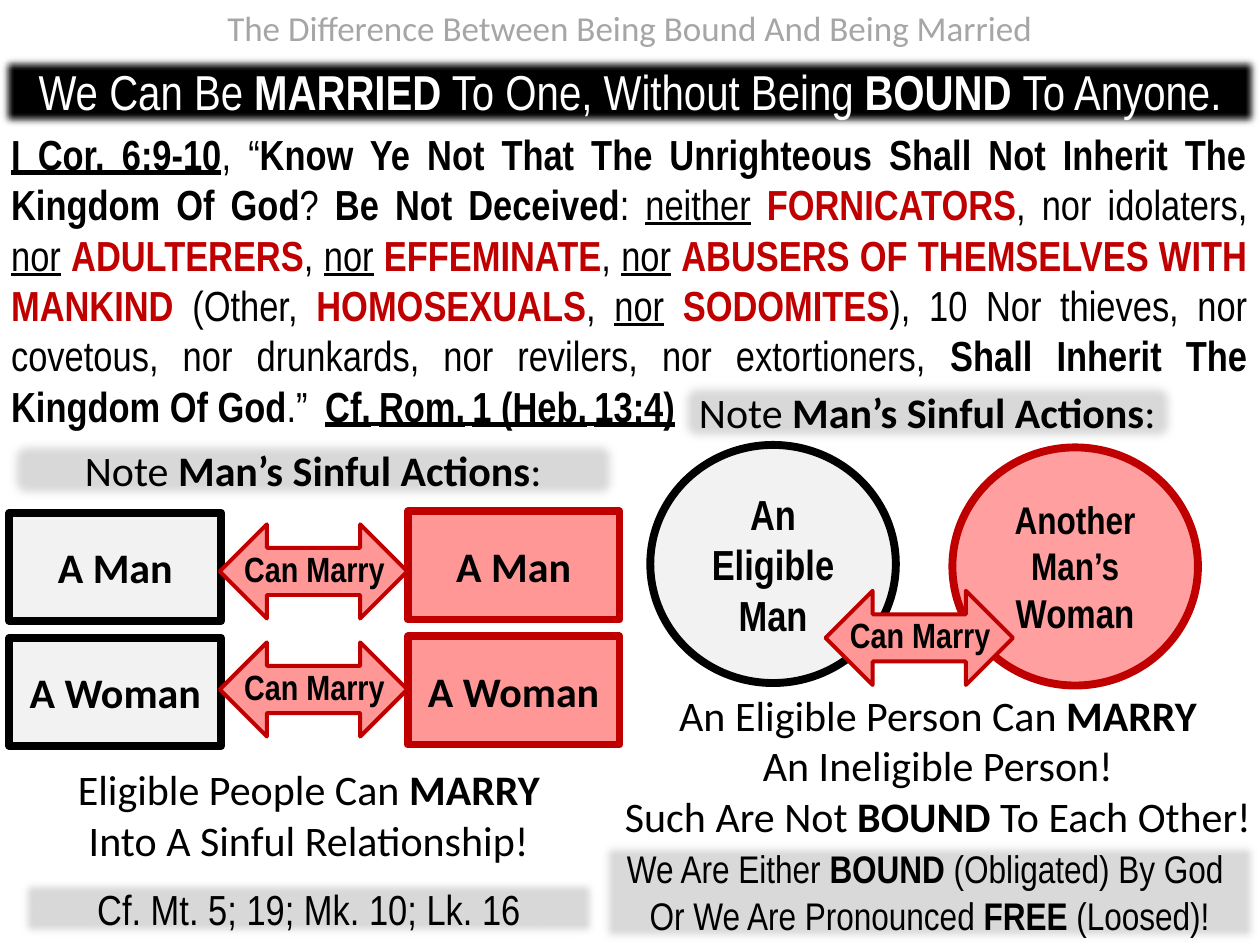
import pptx
import pptx.util
import pptx.dml.color
import pptx.enum.shapes
import pptx.enum.text
import pptx.oxml
import pptx.oxml.ns

Cm = pptx.util.Cm
Pt = pptx.util.Pt
SHAPE = pptx.enum.shapes.MSO_SHAPE
ANCHOR = pptx.enum.text.MSO_ANCHOR
ALIGN = pptx.enum.text.PP_ALIGN

COLOURS = {
    "black": "000000", "white": "FFFFFF", "heading": "A6A6A6",
    "bar": "D9D9D9", "eligible": "F2F2F2", "red": "C00000",
    "sinful": "FF9797", "sinful circle": "FF9F9F",
}
NARROW, SANS = "Arial Narrow", "Calibri"

# Each span is (text, style, size): b bold, u underlined, r red; size is optional.
NOTE = [("Note ", ""), ("Man’s Sinful Actions", "b"), (":", "")]
VERSE = [
    ("I Cor. 6:9-10", "bu"), (", “", ""),
    ("Know Ye Not That The Unrighteous Shall Not Inherit The Kingdom Of God", "b"),
    ("? ", ""), ("Be Not Deceived", "b"), (": ", ""), ("neither", "u"), (" ", ""),
    ("FORNICATORS", "br"), (", nor idolaters, ", ""), ("nor", "u"), (" ", ""),
    ("ADULTERERS", "br"), (", ", ""), ("nor", "u"), (" ", ""),
    ("EFFEMINATE", "br"), (", ", ""), ("nor", "u"), (" ", ""),
    ("ABUSERS OF THEMSELVES WITH MANKIND", "br"), (" (Other, ", ""),
    ("HOMOSEXUALS", "br"), (", ", ""), ("nor", "u"), (" ", ""), ("SODOMITES", "br"),
    ("), 10 Nor thieves, nor covetous, nor drunkards, nor revilers, nor extortioners, ", ""),
    ("Shall Inherit The Kingdom Of God", "b"), (".” ", ""), (" ", "", 20),
    ("Cf.", "bu"), (" ", "bu", 20), ("Rom.", "bu"), (" ", "bu", 18),
    ("1 (Heb.", "bu"), (" ", "bu", 18), ("13:4)", "bu"),
]


def rgb(name):
    return pptx.dml.color.RGBColor.from_string(COLOURS[name])


def write(box, spans, size, font, colour="black", anchor=ANCHOR.TOP, align=ALIGN.CENTER):
    """Fill the box with one paragraph; a newline in a span is a line break."""
    frame = box.text_frame
    frame.word_wrap = True
    frame.auto_size = pptx.enum.text.MSO_AUTO_SIZE.NONE
    frame.vertical_anchor = anchor
    para = frame.paragraphs[0]
    para.alignment = align
    para.space_before = Pt(0)
    for text, style, *own_size in spans:
        for number, line in enumerate(text.split("\n")):
            if number:
                para.add_line_break()
            if not line:
                continue
            span = para.add_run()
            span.text = line
            span.font.name = font
            span.font.size = Pt(own_size[0] if own_size else size)
            span.font.bold = "b" in style
            span.font.underline = "u" in style
            span.font.color.rgb = rgb("red" if "r" in style else colour)


def place(box, left, top, width, height):
    box.left, box.top, box.width, box.height = map(Cm, (left, top, width, height))


def add_shape(page, kind, area, fill=None, line=None, line_width=4.5):
    shape = page.shapes.add_shape(kind, *map(Cm, area))
    shape.shadow.inherit = False
    if fill:
        shape.fill.solid()
        shape.fill.fore_color.rgb = rgb(fill)
    else:
        shape.fill.background()
    if line:
        shape.line.color.rgb = rgb(line)
        shape.line.width = Pt(line_width)
    else:
        shape.line.fill.background()
    return shape


def add_soft_bar(page, kind, area, fill="bar"):
    bar = add_shape(page, kind, area, fill)
    effects = bar._element.spPr.find(pptx.oxml.ns.qn("a:effectLst"))
    effects.append(pptx.oxml.parse_xml(
        '<a:softEdge %s rad="63500"/>' % pptx.oxml.ns.nsdecls("a")))
    return bar


def add_note(page, area):
    write(add_soft_bar(page, SHAPE.ROUNDED_RECTANGLE, area), NOTE, 24, SANS,
          anchor=ANCHOR.MIDDLE)


def add_conclusion(page, area, spans):
    write(add_shape(page, SHAPE.ROUNDED_RECTANGLE, area), spans, 24, SANS,
          anchor=ANCHOR.MIDDLE)


def add_person(page, kind, area, fill, line, spans, size, font):
    write(add_shape(page, kind, area, fill, line), spans, size, font,
          anchor=ANCHOR.MIDDLE)


def add_marry_arrow(page, left, top):
    """Add an upright double arrow turned on its side, with its label."""
    arrow = add_shape(page, SHAPE.UP_DOWN_ARROW, (left, top, 1.9, 3.78),
                      "sinful", "red", 2.25)
    arrow.rotation = 90
    label = page.shapes.add_textbox(Cm(left - 1), Cm(top + 1.28), Cm(3.94), Cm(1.12))
    write(label, [("Can Marry", "b")], 20, NARROW)


def add_heading_and_verse(page):
    title, body = page.shapes.title, page.placeholders[1]
    place(title, 0, 0, 25.4, 1.12)
    write(title, [("The Difference Between Being Bound And Being Married", "")],
          20, SANS, "heading")
    place(body, -0.03, 2.46, 25.43, 6.4)
    write(body, VERSE, 24, NARROW, align=ALIGN.JUSTIFY)
    properties = body.text_frame.paragraphs[0]._p.get_or_add_pPr()
    properties.set("marL", "0")
    properties.set("indent", "0")
    properties.append(pptx.oxml.parse_xml("<a:buNone %s/>" % pptx.oxml.ns.nsdecls("a")))


def add_bars(page):
    claim = add_soft_bar(page, SHAPE.RECTANGLE, (0, 1.12, 25.4, 1.45), "black")
    write(claim, [("We Can Be ", ""), ("MARRIED", "b"), (" To One, Without Being", ""),
                  (" BOUND ", "b"), ("To Anyone.", "")], 28, NARROW, "white")
    status = add_soft_bar(page, SHAPE.RECTANGLE, (12.07, 16.92, 13.34, 2.13))
    write(status, [("We Are Either ", ""), ("BOUND", "b"),
                   (" (Obligated) By God \nOr We Are Pronounced ", ""),
                   ("FREE", "b"), (" (Loosed)!", "")], 22, NARROW)
    references = add_soft_bar(page, SHAPE.RECTANGLE, (0.36, 17.68, 11.73, 1.27))
    write(references, [("Cf. Mt. 5; 19; Mk. 10; Lk. 16", "")], 24, NARROW)


def add_same_sex_pairs(page):
    add_note(page, (0.18, 8.86, 12.27, 1.22))
    for row, name in enumerate(("A Man", "A Woman")):
        shift = 2.52 * row
        for left, top, fill, line in ((8.22, 10.31, "sinful", "red"),
                                      (0.19, 10.34, "eligible", "black")):
            add_person(page, SHAPE.RECTANGLE, (left, top + shift, 4.27, 2.18),
                       fill, line, [(name, "b")], 24, SANS)
    for top in (9.63, 12.01):
        add_marry_arrow(page, 5.37, top)
    add_conclusion(page, (0.36, 15.27, 11.73, 2.29),
                   [("Eligible People Can ", ""), ("MARRY\n", "b"),
                    ("Into A Sinful Relationship!", "")])


def add_ineligible_pair(page):
    add_person(page, SHAPE.OVAL, (13.11, 8.97, 4.95, 4.8), "eligible", "black",
               [("An\nEligible\nMan", "b")], 24, NARROW)
    add_person(page, SHAPE.OVAL, (19.2, 9.02, 4.95, 4.8), "sinful circle", "red",
               [("Another\nMan’s\n", "b"), ("Woman", "b", 23)], 22, NARROW)
    add_conclusion(page, (12.09, 13.61, 13.64, 3.63),
                   [("An Eligible Person Can ", ""), ("MARRY\n", "b"),
                    ("An Ineligible Person!\nSuch Are Not ", ""), ("BOUND", "b"),
                    (" To Each Other!", "")])
    add_note(page, (13.69, 7.7, 10.01, 1.22))
    add_marry_arrow(page, 17.58, 10.97)


def main():
    deck = pptx.Presentation()
    deck.slide_width, deck.slide_height = Cm(25.4), Cm(19.05)
    page = deck.slides.add_slide(deck.slide_layouts[1])
    add_heading_and_verse(page)
    add_bars(page)
    add_ineligible_pair(page)
    add_same_sex_pairs(page)
    deck.save("out.pptx")


if __name__ == "__main__":
    main()
